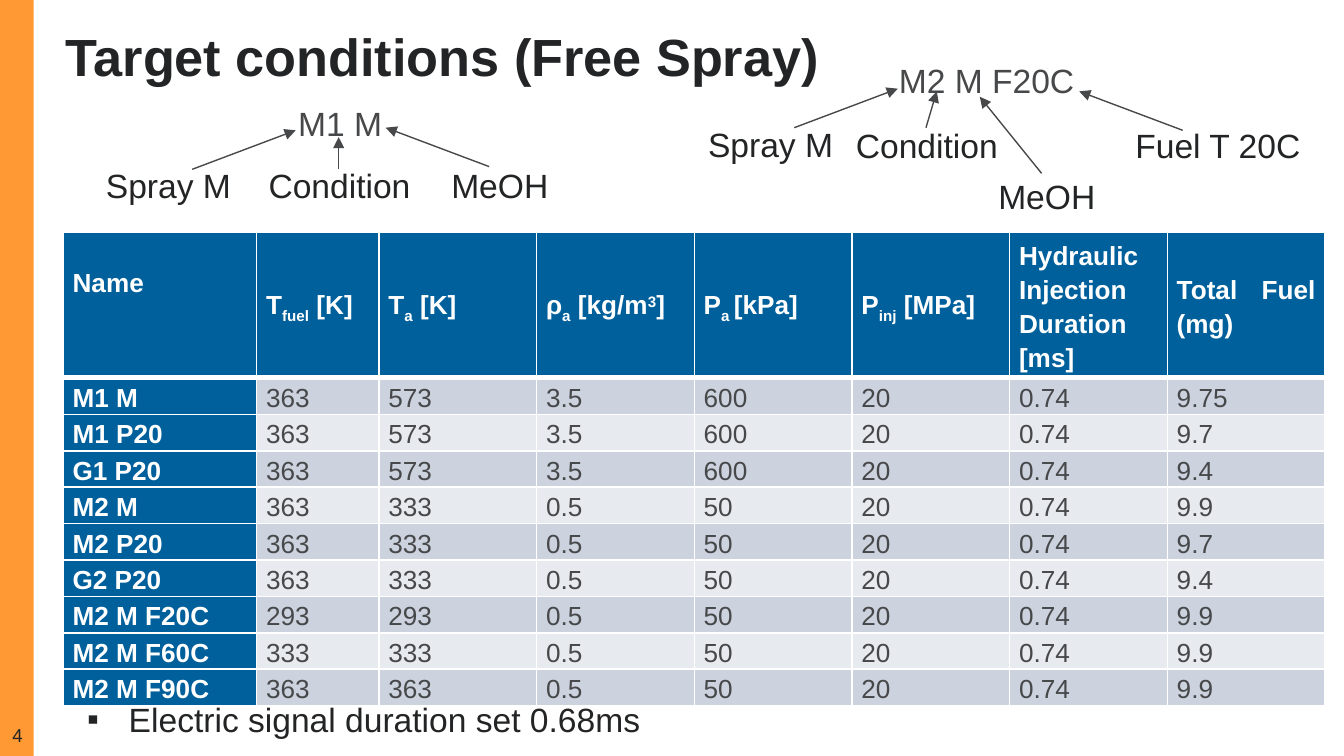
from typing import NamedTuple

from lxml.etree import SubElement
from pptx import Presentation
from pptx.dml.color import RGBColor
from pptx.enum.shapes import MSO_CONNECTOR, MSO_SHAPE
from pptx.enum.text import MSO_ANCHOR, MSO_AUTO_SIZE, PP_ALIGN
from pptx.oxml.ns import qn
from pptx.util import Inches, Pt

COLORS = {
    "accent": "FF9933",
    "dark": "232425",
    "gray": "47484A",
    "blue": "00609C",
    "white": "FFFFFF",
    "band_dark": "CCD2DE",
    "band_light": "E7EAEF",
}
FONT = "Arial"
SUBSCRIPT, SUPERSCRIPT = -25, 30


class TextRun(NamedTuple):
    text: str
    baseline: int = 0


class Label(NamedTuple):
    text: str
    left: float
    top: float


class Arrow(NamedTuple):
    start: tuple[float, float]
    end: tuple[float, float]


class Legend(NamedTuple):
    """A case name with arrows that explain its parts."""
    name: Label
    labels: list[Label]
    arrows: list[Arrow]


LEGENDS = [
    Legend(
        Label("M1 M", 2.12, 0.67),
        [Label("Spray M", 0.69, 1.18), Label("MeOH", 3.26, 1.18), Label("Condition", 1.9, 1.18)],
        [Arrow((1.43, 1.26), (2.2, 0.97)), Arrow((3.64, 1.24), (2.87, 0.95)),
         Arrow((2.52, 1.26), (2.52, 1.02))],
    ),
    Legend(
        Label("M2 M F20C", 6.59, 0.35),
        [Label("Spray M", 5.17, 0.87), Label("MeOH", 7.33, 1.26),
         Label("Condition", 6.27, 0.88), Label("Fuel T 20C", 8.35, 0.88)],
        [Arrow((5.91, 0.95), (6.68, 0.66)), Arrow((7.75, 1.29), (7.29, 0.72)),
         Arrow((6.89, 0.95), (6.97, 0.68)), Arrow((8.8, 0.97), (8.03, 0.68))],
    ),
]

TABLE_WIDTH, NAME_WIDTH, FUEL_WIDTH = 9.39, 1.44, 0.91
COLUMN_WIDTHS = [NAME_WIDTH, FUEL_WIDTH] + [(TABLE_WIDTH - NAME_WIDTH - FUEL_WIDTH) / 6] * 6
HEADER_HEIGHT, ROW_HEIGHT = 0.56, 0.19
HEADER = [
    [TextRun("Name")],
    [TextRun("T"), TextRun("fuel", SUBSCRIPT), TextRun(" [K]")],
    [TextRun("T"), TextRun("a", SUBSCRIPT), TextRun(" [K]")],
    [TextRun("ρ"), TextRun("a", SUBSCRIPT), TextRun(" [kg/m"),
     TextRun("3", SUPERSCRIPT), TextRun("]")],
    [TextRun("P"), TextRun("a ", SUBSCRIPT), TextRun("[kPa]")],
    [TextRun("P"), TextRun("inj", SUBSCRIPT), TextRun(" [MPa]")],
    [TextRun("Hydraulic Injection Duration [ms]")],
    [TextRun("Total Fuel (mg)")],
]
CONDITIONS = [
    ("M1 M", "363", "573", "3.5", "600", "20", "0.74", "9.75"),
    ("M1 P20", "363", "573", "3.5", "600", "20", "0.74", "9.7"),
    ("G1 P20", "363", "573", "3.5", "600", "20", "0.74", "9.4"),
    ("M2 M", "363", "333", "0.5", "50", "20", "0.74", "9.9"),
    ("M2 P20", "363", "333", "0.5", "50", "20", "0.74", "9.7"),
    ("G2 P20", "363", "333", "0.5", "50", "20", "0.74", "9.4"),
    ("M2 M F20C", "293", "293", "0.5", "50", "20", "0.74", "9.9"),
    ("M2 M F60C", "333", "333", "0.5", "50", "20", "0.74", "9.9"),
    ("M2 M F90C", "363", "363", "0.5", "50", "20", "0.74", "9.9"),
]


def rgb(color: str) -> RGBColor:
    return RGBColor.from_string(COLORS[color])


def write(paragraph, runs: list[TextRun], size: float, color: str,
          bold: bool = False, justified: bool = False) -> None:
    if justified:
        paragraph.alignment = PP_ALIGN.JUSTIFY
        paragraph.line_spacing = 1.16
        paragraph.space_after = Pt(8)
    for text, baseline in runs:
        run = paragraph.add_run()
        run.text = text
        run.font.name = FONT
        run.font.size = Pt(size)
        run.font.bold = bold
        run.font.color.rgb = rgb(color)
        if baseline:
            run._r.get_or_add_rPr().set("baseline", f"{baseline * 1000}")


def add_text(slide, label: Label, width: float, height: float, size: float = 18,
             color: str = "dark", bold: bool = False, justified: bool = False,
             bullet: str = ""):
    box = slide.shapes.add_textbox(
        Inches(label.left), Inches(label.top), Inches(width), Inches(height))
    frame = box.text_frame
    frame.word_wrap = True
    frame.auto_size = MSO_AUTO_SIZE.SHAPE_TO_FIT_TEXT
    paragraph = frame.paragraphs[0]
    if bullet:
        properties = paragraph._p.get_or_add_pPr()
        properties.set("marL", str(Inches(0.31)))
        properties.set("indent", str(Inches(-0.31)))
        SubElement(properties, qn("a:buFont"), typeface=FONT)
        SubElement(properties, qn("a:buChar"), char=bullet)
    write(paragraph, [TextRun(label.text)], size, color, bold, justified)
    return box


def add_arrow(slide, arrow: Arrow) -> None:
    connector = slide.shapes.add_connector(
        MSO_CONNECTOR.STRAIGHT, *(Inches(value) for value in arrow.start + arrow.end))
    connector.line.color.rgb = rgb("gray")
    connector.line.width = Pt(0.75)
    SubElement(connector.line._get_or_add_ln(), qn("a:tailEnd"), type="triangle")
    SubElement(connector._element.spPr, qn("a:effectLst"))


def add_legend(slide, legend: Legend) -> None:
    add_text(slide, legend.name, 5.06, 0.43, color="gray", justified=True)
    for label in legend.labels:
        add_text(slide, label, 1.54, 0.4)
    for arrow in legend.arrows:
        add_arrow(slide, arrow)


def set_borders(cell, top: float, bottom: float) -> None:
    """Draw white borders; they must come before the fill in the cell's XML."""
    properties = cell._tc.get_or_add_tcPr()
    for index, (side, width) in enumerate(
            [("L", 1), ("R", 1), ("T", top), ("B", bottom)]):
        border = SubElement(properties, qn(f"a:ln{side}"), w=str(Pt(width)))
        fill = SubElement(border, qn("a:solidFill"))
        SubElement(fill, qn("a:srgbClr"), val=COLORS["white"])
        properties.insert(index, border)


def add_conditions_table(slide) -> None:
    rows = [HEADER] + [[[TextRun(value)] for value in row] for row in CONDITIONS]
    heights = [HEADER_HEIGHT] + [ROW_HEIGHT] * len(CONDITIONS)
    table = slide.shapes.add_table(
        len(rows), len(COLUMN_WIDTHS), Inches(0.47), Inches(1.73),
        Inches(TABLE_WIDTH), Inches(sum(heights))).table
    for column, width in zip(table.columns, COLUMN_WIDTHS):
        column.width = Inches(width)
    for row_index, (values, height) in enumerate(zip(rows, heights)):
        table.rows[row_index].height = Inches(height)
        band = "band_dark" if row_index % 2 else "band_light"
        for column_index, runs in enumerate(values):
            cell = table.cell(row_index, column_index)
            heading = row_index == 0 or column_index == 0
            cell.vertical_anchor = MSO_ANCHOR.MIDDLE
            cell.margin_left = cell.margin_right = Inches(0.07)
            cell.margin_top = cell.margin_bottom = 0
            set_borders(cell, top=3 if row_index == 1 else 1,
                        bottom=3 if row_index == 0 else 1)
            cell.fill.solid()
            cell.fill.fore_color.rgb = rgb("blue" if heading else band)
            write(cell.text_frame.paragraphs[0], runs, 14,
                  "white" if heading else "gray", bold=heading, justified=True)
    # The "Name" heading sits above the middle of its row.
    table.cell(0, 0).margin_bottom = Inches(0.36)


def add_side_bar(slide, height: int) -> None:
    bar = slide.shapes.add_shape(MSO_SHAPE.RECTANGLE, 0, 0, Inches(0.25), height)
    bar.shadow.inherit = False
    bar.fill.solid()
    bar.fill.fore_color.rgb = rgb("accent")
    bar.line.fill.background()


def add_page_number(slide) -> None:
    frame = add_text(slide, Label("4", -0.12, 5.4), 0.5, 0.15, size=10).text_frame
    frame.auto_size = MSO_AUTO_SIZE.NONE
    frame.vertical_anchor = MSO_ANCHOR.BOTTOM
    frame.margin_left = frame.margin_right = frame.margin_bottom = 0
    frame.paragraphs[0].alignment = PP_ALIGN.CENTER


def main() -> None:
    presentation = Presentation()
    presentation.slide_width = Inches(10)
    presentation.slide_height = Inches(10) * 9 // 16
    slide = presentation.slides.add_slide(presentation.slide_layouts[6])
    add_side_bar(slide, presentation.slide_height)
    add_text(slide, Label("Target conditions (Free Spray)", 0.39, 0.13), 9.55, 0.57,
             size=28, bold=True)
    add_page_number(slide)
    add_conditions_table(slide)
    add_text(slide, Label("Electric signal duration set 0.68ms", 0.55, 5.15), 7.8, 0.4,
             bullet="▪")
    for legend in LEGENDS:
        add_legend(slide, legend)
    presentation.save("out.pptx")


if __name__ == "__main__":
    main()
